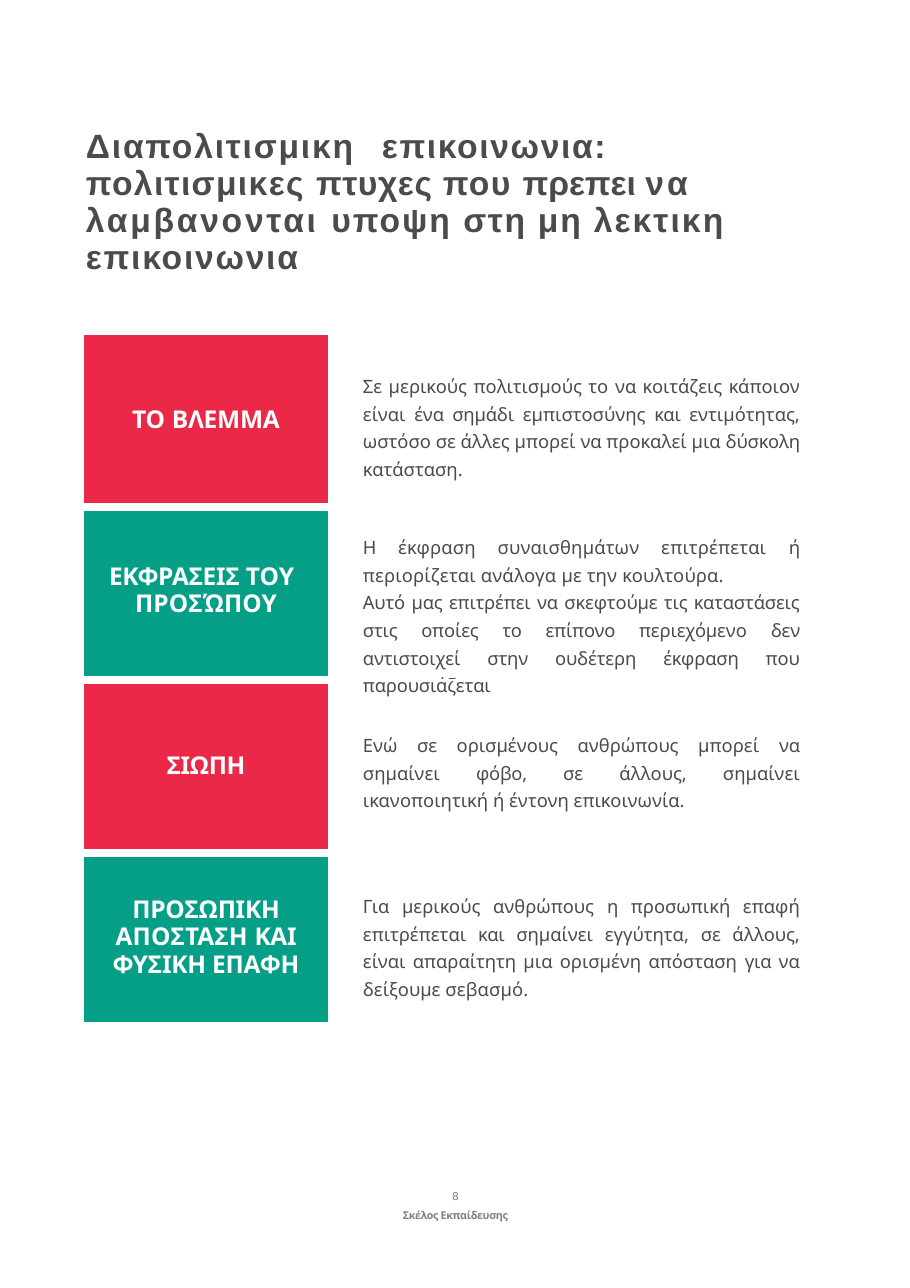
from typing import NamedTuple

from lxml.etree import SubElement
from pptx import Presentation
from pptx.dml.color import RGBColor
from pptx.enum.text import MSO_ANCHOR, PP_ALIGN
from pptx.oxml.ns import qn
from pptx.util import Pt

PX = 8298  # EMU per pixel
COLORS = {"red": "EB2847", "green": "049F86", "white": "FFFFFF",
          "ink": "4A4B4C", "footer": "7F8080"}


class Style(NamedTuple):
    font: str
    size: float
    color: str
    bold: bool = False


class Span(NamedTuple):
    text: str
    spacing: int = 0  # hundredths of a point


class Margins(NamedTuple):
    left: int = 0
    top: int = 0
    right: int = 0
    bottom: int = 0


class Topic(NamedTuple):
    fill: str
    label: list[Span]
    label_margins: Margins
    label_align: PP_ALIGN
    label_leading: float | None
    hanging: int
    body: list[list[Span]]
    body_top: int


TITLE = Style("Arial", 22, "ink", True)
LABEL = Style("Noto Sans", 16, "white", True)
BODY = Style("Noto Sans", 12, "ink")
PAGE_NUMBER = Style("DejaVu Sans", 7, "footer")
FOOTER = Style("Noto Sans", 7, "footer", True)

TITLE_SPANS = [
    Span("Διαπολιτισμικη\t", 120), Span("επικοινωνια: ", 110),
    Span("πολιτισμικες ", 90), Span("πτυχες ", 40), Span("που ", 90),
    Span("πρεπει "), Span("να ", 200), Span("λαμβανονται ", 180),
    Span("υποψη ", 130), Span("στη ", 110), Span("μη ", 120),
    Span("λεκτικη ", 140), Span("επικοινωνια", 120),
]

TOPICS = [
    Topic("red", [Span("ΤΟ ", 10), Span("ΒΛΕΜΜΑ", -10)],
          Margins(top=68), PP_ALIGN.CENTER, None, 0,
          [[Span("Σε μερικούς πολιτισμούς το "), Span("να ", -10),
            Span("κοιτάζεις κάποιον είναι "), Span("ένα σημάδι ", -10),
            Span("εμπιστοσύνης "), Span("και ", -10),
            Span("εντιμότητας, ωστόσο "), Span("σε ", -10),
            Span("άλλες μπορεί "), Span("να ", -10),
            Span("προκαλεί μια "), Span("δύσκολη ", -10),
            Span("κατάσταση.")]], 37),
    Topic("green", [Span("ΕΚΦΡΑΣΕΙΣ ", -20), Span("ΤΟΥ ΠΡΟΣΏΠΟΥ", 10)],
          Margins(top=58), PP_ALIGN.LEFT, 18, 26,
          [[Span("Η ", -10), Span("έκφραση συναισθημάτων επιτρέπεται ", 10),
            Span("ή ", -10), Span("περιορίζεται ανάλογα ", 10),
            Span("με "), Span("την κουλτούρα.", 10)],
           [Span("Αυτό μας επιτρέπει να σκεφτούμε τις καταστάσεις στις "
                 "οποίες το επίπονο περιεχόμενο ", -10), Span("δεν ", -20),
            Span("αντιστοιχεί στην ουδέτερη έκφραση που παρουσιάζεται", -10)]],
          25),
    Topic("red", [Span("ΣΙΩΠΗ", -20)],
          Margins(top=68), PP_ALIGN.CENTER, None, 0,
          [[Span("Ενώ "), Span("σε ", -10),
            Span("ορισμένους ανθρώπους μπορεί "), Span("να ", -10),
            Span("σημαίνει "), Span("φόβο, σε ", -10),
            Span("άλλους, σημαίνει ικανοποιητική "), Span("ή ", -10),
            Span("έντονη επικοινωνία.")]], 50),
    Topic("green", [Span("ΠΡΟΣΩΠΙΚΗ ", -10), Span("ΑΠΟΣΤΑΣΗ ", 10),
                    Span("ΚΑΙ ", -20), Span("ΦΥΣΙΚΗ ΕΠΑΦΗ", -10)],
          Margins(left=27, top=45, right=27), PP_ALIGN.CENTER, 18, 0,
          [[Span("Για μερικούς ανθρώπους "), Span("η ", -10),
            Span("προσωπική επαφή επιτρέπεται "), Span("και ", -10),
            Span("σημαίνει εγγύτητα, "), Span("σε ", -10),
            Span("άλλους, είναι απαραίτητη μια ορισμένη απόσταση "),
            Span("για ", -10), Span("να δείξουμε "),
            Span("σεβασμό.", 10)]], 38),
]


def add_spans(para, spans: list[Span], style: Style) -> None:
    for span in spans:
        run = para.add_run()
        run.text = span.text
        run.font.name = style.font
        run.font.size = Pt(style.size)
        run.font.bold = style.bold
        run.font.color.rgb = RGBColor.from_string(COLORS[style.color])
        run.font._element.set("spc", str(span.spacing))


def set_margins(holder, margins: Margins) -> None:
    holder.margin_left = margins.left * PX
    holder.margin_top = margins.top * PX
    holder.margin_right = margins.right * PX
    holder.margin_bottom = margins.bottom * PX


def add_box(page, left: int, top: int, width: int, height: int, inset: int):
    box = page.shapes.add_textbox(left * PX, top * PX, width * PX, height * PX)
    box.text_frame.word_wrap = True
    set_margins(box.text_frame, Margins(top=inset))
    return box.text_frame


def add_border(cell, side: str) -> None:
    properties = cell._tc.get_or_add_tcPr()
    line = SubElement(properties, qn(f"a:{side}"), w=str(Pt(6)))
    fill = SubElement(line, qn("a:solidFill"))
    SubElement(fill, qn("a:srgbClr"), val=COLORS["white"])


def fill_label(cell, topic: Topic, sides: list[str]) -> None:
    for side in sides:
        add_border(cell, side)
    cell.fill.solid()
    cell.fill.fore_color.rgb = RGBColor.from_string(COLORS[topic.fill])
    set_margins(cell, topic.label_margins)
    para = cell.text_frame.paragraphs[0]
    para.alignment = topic.label_align
    if topic.label_leading:
        para.line_spacing = Pt(topic.label_leading)
    if topic.hanging:
        para._p.get_or_add_pPr().set("marL", str(2 * topic.hanging * PX))
        para._p.get_or_add_pPr().set("indent", str(-topic.hanging * PX))
    add_spans(para, topic.label, LABEL)


def fill_body(cell, topic: Topic) -> None:
    cell.fill.background()
    set_margins(cell, Margins(left=34, top=topic.body_top, right=15))
    frame = cell.text_frame
    for index, spans in enumerate(topic.body):
        para = frame.add_paragraph() if index else frame.paragraphs[0]
        para.alignment = PP_ALIGN.JUSTIFY
        para.line_spacing = 1.11
        add_spans(para, spans, BODY)


def main() -> None:
    deck = Presentation()
    deck.slide_width, deck.slide_height = 910 * PX, 1288 * PX
    page = deck.slides.add_slide(deck.slide_layouts[6])

    # Footer
    footer = add_box(page, 401, 1189, 109, 35, 1)
    number = footer.paragraphs[0]
    number.alignment = PP_ALIGN.CENTER
    add_spans(number, [Span("8", -10)], PAGE_NUMBER)
    name = footer.add_paragraph()
    name.alignment = PP_ALIGN.CENTER
    name.space_before = Pt(3.7)
    add_spans(name, [Span("Σκέλος Εκπαίδευσης", -20)], FOOTER)

    # Title
    title = add_box(page, 85, 123, 646, 153, 6).paragraphs[0]
    tabs = SubElement(title._p.get_or_add_pPr(), qn("a:tabLst"))
    SubElement(tabs, qn("a:tab"), pos=str(296 * PX), algn="l")
    title.line_spacing = Pt(24)
    title._p.get_or_add_pPr().set("marL", str(PX))
    add_spans(title, TITLE_SPANS, TITLE)

    # Topic table
    frame = page.shapes.add_table(len(TOPICS), 2, 83 * PX, 334 * PX,
                                  732 * PX, 692 * PX)
    table = frame.table
    table.first_row = table.horz_banding = False
    for column, width in zip(table.columns, (246, 486)):
        column.width = width * PX
    for index, topic in enumerate(TOPICS):
        table.rows[index].height = 173 * PX
        label, body = table.cell(index, 0), table.cell(index, 1)
        label.vertical_anchor = body.vertical_anchor = MSO_ANCHOR.TOP
        fill_label(label, topic, ["lnT", "lnB"] if index else ["lnB"])
        fill_body(body, topic)

    deck.save("out.pptx")


if __name__ == "__main__":
    main()
